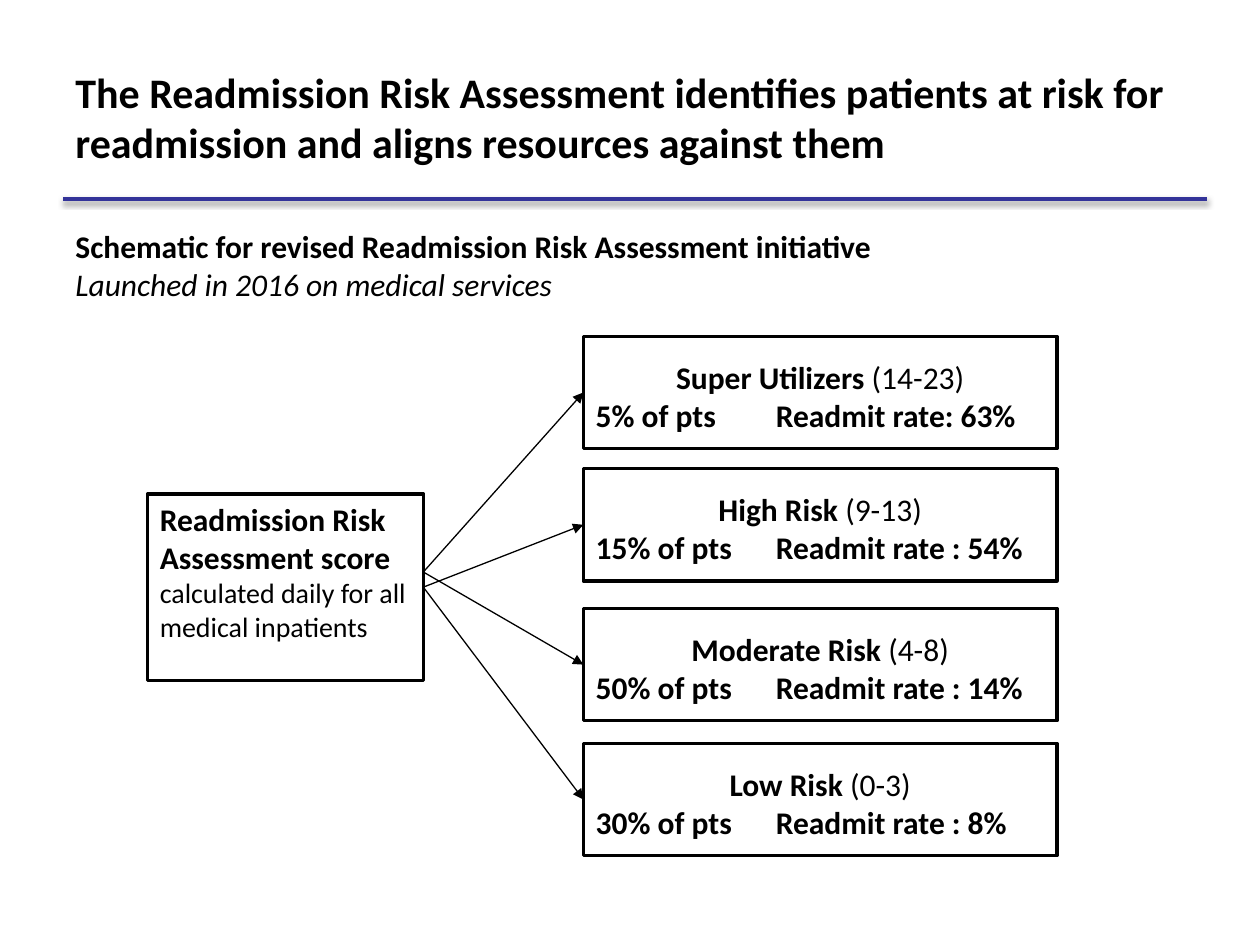
import pptx
import pptx.util
import pptx.dml.color
import pptx.enum.shapes
import pptx.enum.text
import pptx.oxml
import pptx.oxml.ns

Inches, Pt = pptx.util.Inches, pptx.util.Pt
ALIGN, ANCHOR = pptx.enum.text.PP_ALIGN, pptx.enum.text.MSO_ANCHOR
COLORS = {"ink": "000000", "rule": "333399"}
NS = pptx.oxml.ns.nsdecls("a")
BOLD, PLAIN, ITALIC = {"bold": True}, {"bold": False}, {"italic": True}
SHADOW = ('<a:outerShdw blurRad="40000" dist="20000" dir="5400000" rotWithShape="0">'
          '<a:srgbClr val="000000"><a:alpha val="38000"/></a:srgbClr></a:outerShdw>')


def color(name):
    return pptx.dml.color.RGBColor.from_string(COLORS[name])


class Deck:
    """Holds the text style and the current slide."""

    font = {"name": "Calibri", "size": Pt(18)}

    def __init__(self, width, height):
        self.prs = pptx.Presentation()
        self.prs.slide_width, self.prs.slide_height = Inches(width), Inches(height)
        self.s = self.prs.slides.add_slide(self.prs.slide_layouts[6])

    def fill_text(self, sp, paragraphs, anchor=ANCHOR.TOP, top=0.05):
        """Each paragraph is (alignment, tab stop or None, [(text, format), ...])."""
        tf = sp.text_frame
        frame = {"word_wrap": True, "vertical_anchor": anchor, "margin_top": Inches(top)}
        for key, value in frame.items():
            setattr(tf, key, value)
        for i, (align, tab, runs) in enumerate(paragraphs):
            p = tf.paragraphs[0] if i == 0 else tf.add_paragraph()
            p.alignment = align
            if tab:
                p._p.get_or_add_pPr().append(pptx.oxml.parse_xml(
                    f'<a:tabLst {NS}><a:tab pos="{Inches(tab)}" algn="l"/></a:tabLst>'))
            for text, fmt in runs:
                r = p.add_run()
                r.text = text
                r.font.color.rgb = color("ink")
                for key, value in {**self.font, **fmt}.items():
                    setattr(r.font, key, value)

    def text(self, x, y, w, h, paragraphs, **frame):
        sp = self.s.shapes.add_textbox(Inches(x), Inches(y), Inches(w), Inches(h))
        self.fill_text(sp, paragraphs, **frame)

    def box(self, x, y, w, h, paragraphs, **frame):
        sp = self.s.shapes.add_shape(pptx.enum.shapes.MSO_SHAPE.RECTANGLE,
                                     Inches(x), Inches(y), Inches(w), Inches(h))
        sp.shadow.inherit = False
        sp.fill.background()
        sp.line.color.rgb = color("ink")
        sp.line.width = Pt(2)
        self.fill_text(sp, paragraphs, **frame)
        return sp

    def line(self, x1, y1, x2, y2, name="ink", width=0.75, arrow=False, effect=""):
        cn = self.s.shapes.add_connector(pptx.enum.shapes.MSO_CONNECTOR.STRAIGHT,
                                         Inches(x1), Inches(y1), Inches(x2), Inches(y2))
        cn.line.color.rgb = color(name)
        cn.line.width = Pt(width)
        if arrow:
            cn.line._get_or_add_ln().append(
                pptx.oxml.parse_xml(f'<a:tailEnd {NS} type="triangle"/>'))
        cn._element.spPr.append(
            pptx.oxml.parse_xml(f"<a:effectLst {NS}>{effect}</a:effectLst>"))
        return cn


def main():
    deck = Deck(10, 7.5)

    # Title, rule and subtitle
    deck.text(0.5, 0.3, 9, 1.25, [(ALIGN.LEFT, None, [(
        "The Readmission Risk Assessment identifies patients at risk for "
        "readmission and aligns resources against them",
        {"bold": True, "size": Pt(24)})])], anchor=ANCHOR.MIDDLE)
    deck.line(0.5, 1.58, 9.58, 1.58, "rule", 2, effect=SHADOW)
    deck.text(0.5, 1.75, 7.49, 0.71, [
        (ALIGN.LEFT, None,
         [("Schematic for revised Readmission Risk Assessment initiative", BOLD)]),
        (ALIGN.LEFT, None, [("Launched in 2016 on medical services", ITALIC)])])

    # Score box
    score_x, score_y, score_w, score_h = 1.17, 3.92, 2.19, 1.48
    score = deck.box(score_x, score_y, score_w, score_h, [(ALIGN.LEFT, None, [
        ("Readmission Risk Assessment score ", BOLD),
        ("calculated daily for all medical inpatients", {"size": Pt(16)})])])

    # Risk tiers: top, name, score range, share, rate, arrow leaves the score's middle
    tier_x, tier_w, tier_h = 4.63, 3.76, 0.89
    tiers = [
        (2.67, "Super Utilizers ", "(14-23)", "5% of pts", "Readmit rate: 63%", False),
        (3.72, "High Risk ", "(9-13)", "15% of pts", "Readmit rate : 54%", True),
        (4.83, "Moderate Risk ", "(4-8)", "50% of pts", "Readmit rate : 14%", False),
        (5.90, "Low Risk ", "(0-3)", "30% of pts", "Readmit rate : 8%", True),
    ]
    upper_start = 4.54
    for y, name, scores, share, rate, from_middle in tiers:
        tier = deck.box(tier_x, y, tier_w, tier_h, [
            (ALIGN.CENTER, None, [(name, BOLD), (scores, PLAIN)]),
            (ALIGN.LEFT, 1.43, [(f"{share}\t{rate}", BOLD)])], top=0.17)
        arrow = deck.line(score_x + score_w, upper_start, tier_x, y + tier_h / 2, arrow=True)
        if from_middle:
            arrow.begin_connect(score, 3)
        arrow.end_connect(tier, 1)

    deck.prs.save("out.pptx")


if __name__ == "__main__":
    main()
